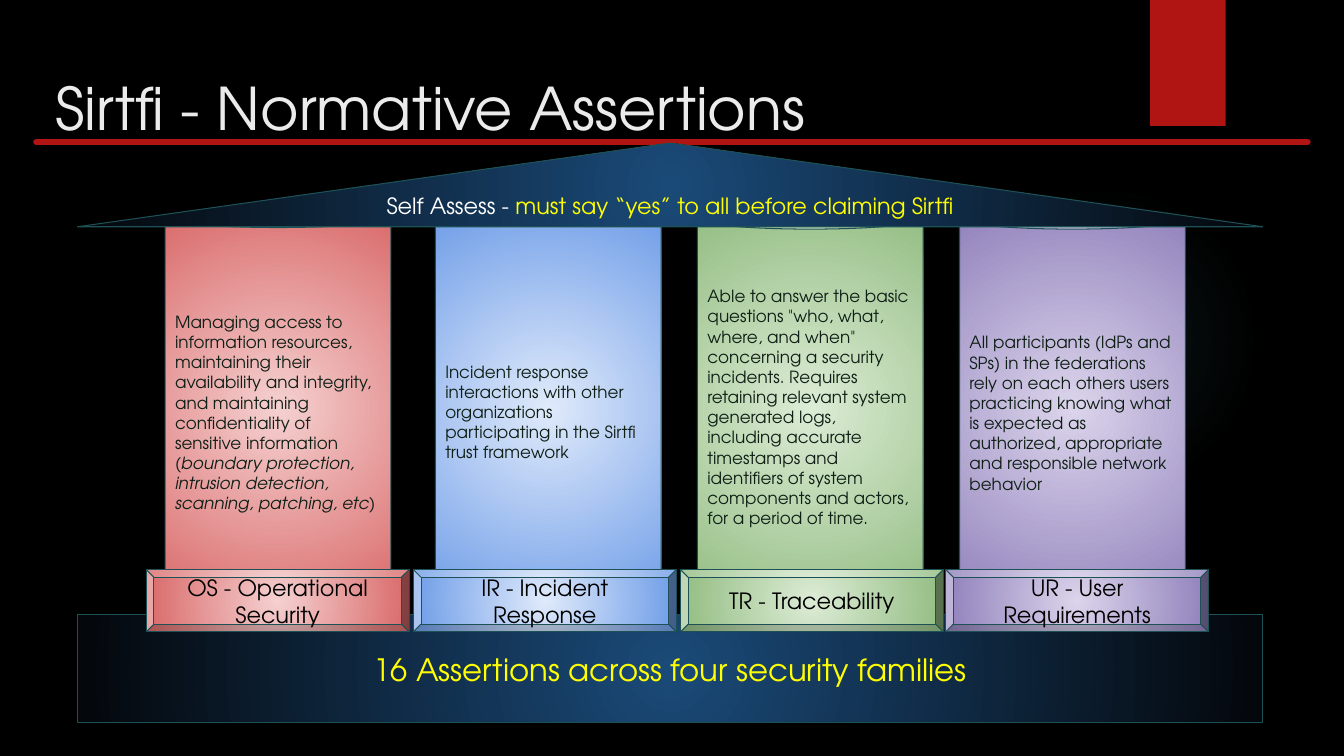
from lxml import etree
from pptx import Presentation
from pptx.dml.color import RGBColor
from pptx.enum.shapes import MSO_CONNECTOR, MSO_SHAPE
from pptx.enum.text import MSO_ANCHOR, PP_ALIGN
from pptx.oxml.ns import qn
from pptx.util import Pt

LEFT, CENTER = PP_ALIGN.LEFT, PP_ALIGN.CENTER
MIDDLE = MSO_ANCHOR.MIDDLE
RECTANGLE, OVAL = MSO_SHAPE.RECTANGLE, MSO_SHAPE.OVAL
CAN, BEVEL, TRIANGLE = MSO_SHAPE.CAN, MSO_SHAPE.BEVEL, MSO_SHAPE.ISOSCELES_TRIANGLE
STRAIGHT = MSO_CONNECTOR.STRAIGHT

FONT = "TeX Gyre Adventor"
RED, OUTLINE, YELLOW, PILLAR_TEXT = "B01513", "1E5155", "FFFF00", "0F1F16"
NAVY = [(0, "1A4A78", 100), (100, "04070B", 100)]
GLOW = [(0, "50B9C1", 7), (36, "50B9C1", 6), (69, "50B9C1", 0)]

# pillar left, base left, can adjustment, bottom inset, inner and outer colour, base label, text runs
PILLARS = [
    (118, 104.4, 0.084, 7.2, "F5D0D0", "D96868", "OS - Operational Security",
     [("Managing access to information resources, maintaining their availability and "
       "integrity, and maintaining confidentiality of sensitive information", {}),
      ("\n(boundary protection, intrusion detection, scanning, patching, etc)",
       {"italic": True})]),
    (311, 295.2, 0.071, 7.2, "DFEAFB", "6E9CE7", "IR - Incident Response",
     [("Incident response interactions with other organizations participating in "
       "the Sirtfi trust framework", {})]),
    (498.2, 486, 0.091, 15.6, "DCECD5", "92BC81", "TR - Traceability",
     [('Able to answer the basic questions "who, what, where, and when" concerning a '
       "security incidents. Requires retaining relevant system generated logs, including "
       "accurate timestamps and identifiers of system components and actors, for a period "
       "of time.", {})]),
    (685.4, 675.4, 0.091, 7.2, "DBD4EB", "9080BB", "UR - User Requirements",
     [("All participants (IdPs and SPs) in the federations rely on each others users "
       "practicing knowing what is expected as authorized, appropriate and responsible "
       "network behavior", {})]),
]


def rgb(color):
    return RGBColor.from_string(color)


def fill_radial(shape, stops):
    """Fill from the centre outwards; each stop is position, colour and opacity in percent."""
    shape.fill.gradient()
    gradient = shape._element.spPr.find(qn("a:gradFill"))
    for child in list(gradient):
        gradient.remove(child)
    stop_list = etree.SubElement(gradient, qn("a:gsLst"))
    for position, color, opacity in stops:
        stop = etree.SubElement(stop_list, qn("a:gs"), pos=str(position * 1000))
        color_element = etree.SubElement(stop, qn("a:srgbClr"), val=color)
        if opacity < 100:
            etree.SubElement(color_element, qn("a:alpha"), val=str(opacity * 1000))
    circle = etree.SubElement(gradient, qn("a:path"))
    circle.set("path", "circle")
    etree.SubElement(circle, qn("a:fillToRect"), l="50000", t="50000", r="50000", b="50000")


def add_block(slide, kind, left, top, width, height, fill, line=OUTLINE, adjustment=None):
    """Add a preset shape; fill is a hex colour or a list of radial stops."""
    shape = slide.shapes.add_shape(kind, Pt(left), Pt(top), Pt(width), Pt(height))
    shape.shadow.inherit = False
    if adjustment is not None:
        shape.adjustments[0] = adjustment
    if isinstance(fill, str):
        shape.fill.solid()
        shape.fill.fore_color.rgb = rgb(fill)
    else:
        fill_radial(shape, fill)
    if line:
        shape.line.color.rgb = rgb(line)
        shape.line.width = Pt(0.75)
    else:
        shape.line.fill.background()
    return shape


def write_text(shape, runs, size, color, align=CENTER, bottom_inset=7.2):
    """Write (text, format) runs into one paragraph; a leading newline breaks the line."""
    frame = shape.text_frame
    frame.word_wrap = True
    frame.vertical_anchor = MIDDLE
    frame.margin_left = frame.margin_right = frame.margin_top = Pt(7.2)
    frame.margin_bottom = Pt(bottom_inset)
    paragraph = frame.paragraphs[0]
    paragraph.alignment = align
    for text, style in runs:
        if text.startswith("\n"):
            paragraph.add_line_break()
        run = paragraph.add_run()
        run.text = text.lstrip("\n")
        run.font.name = FONT
        run.font.size = Pt(size)
        run.font.italic = style.get("italic", False)
        run.font.color.rgb = rgb(style.get("color", color))


def add_rule(slide, left, right, y):
    rule = slide.shapes.add_connector(STRAIGHT, Pt(left), Pt(y), Pt(right), Pt(y))
    rule.line.color.rgb = rgb(RED)
    rule.line.width = Pt(4.5)
    rule.line._ln.set("cap", "rnd")
    etree.SubElement(rule._element.spPr, qn("a:effectLst"))


def add_title(slide, text):
    title = slide.shapes.title
    title.left, title.top, title.width, title.height = Pt(32.4), Pt(46.8), Pt(894.2), Pt(59.8)
    write_text(title, [(text, {})], 42, "EBEBEB", LEFT)


def main():
    presentation = Presentation()
    presentation.slide_width, presentation.slide_height = Pt(960), Pt(540)
    slide = presentation.slides.add_slide(presentation.slide_layouts[5])
    slide.background.fill.solid()
    slide.background.fill.fore_color.rgb = rgb("000000")

    add_block(slide, OVAL, 677.5, 131.8, 221.8, 221.8, GLOW, line=None)
    add_block(slide, RECTANGLE, 821.5, 0, 54, 90, RED, line=None)
    add_rule(slide, 26, 934, 101.5)
    add_title(slide, "Sirtfi - Normative Assertions")

    foundation = add_block(slide, RECTANGLE, 55.4, 439.2, 846.7, 77, NAVY)
    write_text(foundation, [("16 Assertions across four security families", {})], 22, YELLOW)

    for left, _, adjustment, bottom_inset, inner, outer, _, runs in PILLARS:
        pillar = add_block(slide, CAN, left, 149, 161.3, 284.4,
                           [(0, inner, 100), (100, outer, 100)], adjustment=adjustment)
        write_text(pillar, runs, 12, PILLAR_TEXT, LEFT, bottom_inset)

    roof = add_block(slide, TRIANGLE, 55.4, 102.2, 846.7, 59.8, NAVY)
    write_text(roof, [("Self Assess - ", {}),
                      ("must say “yes” to all before claiming Sirtfi", {"color": YELLOW})],
               16, "FFFFFF")

    for _, left, _, _, inner, outer, label, _ in PILLARS:
        base = add_block(slide, BEVEL, left, 406.8, 187.9, 44.6,
                         [(0, inner, 100), (100, outer, 100)], adjustment=0.125)
        write_text(base, [(label, {})], 16, "000000")

    presentation.save("out.pptx")


if __name__ == "__main__":
    main()
